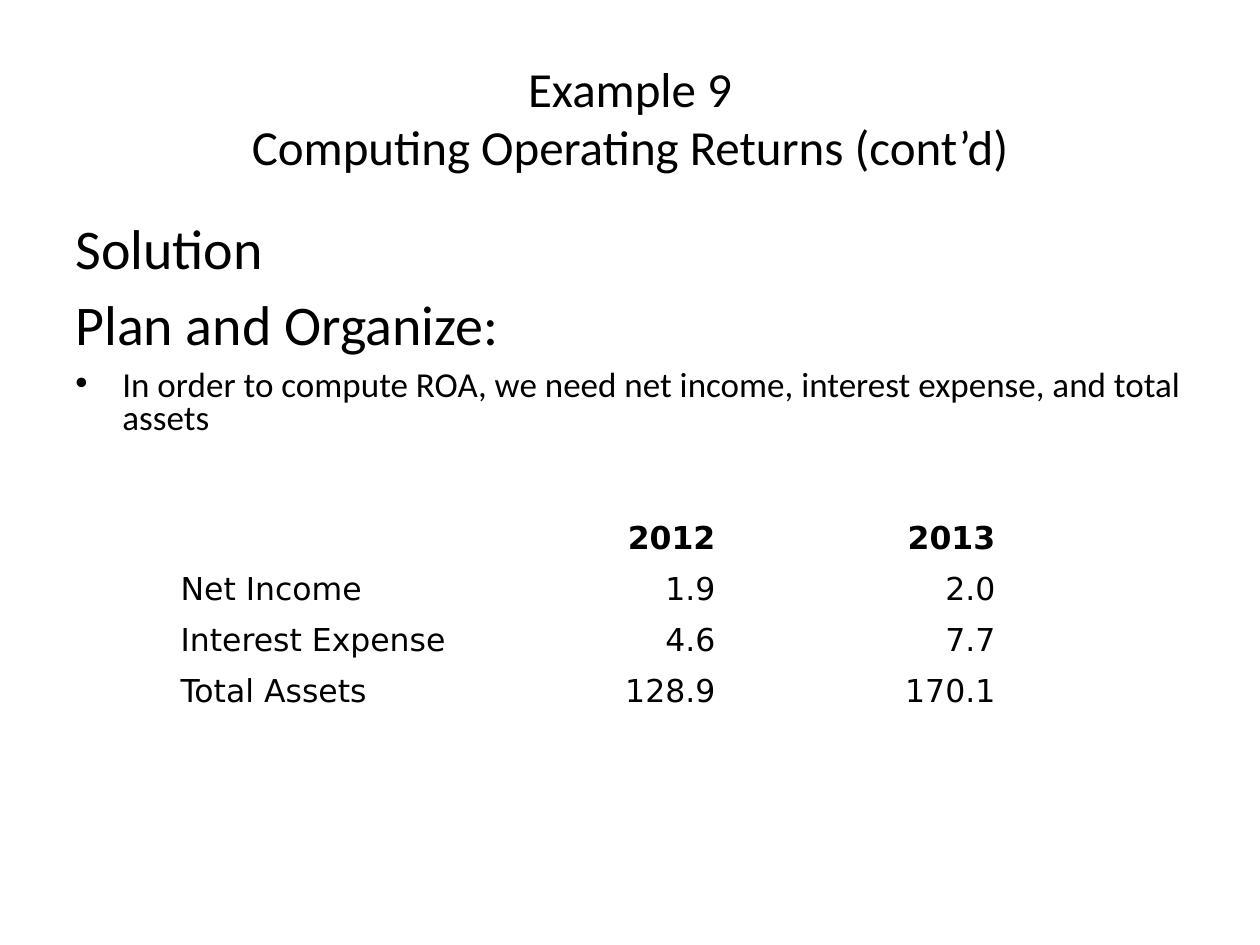
from lxml.etree import SubElement
from pptx import Presentation
from pptx.dml.color import RGBColor
from pptx.enum.text import MSO_ANCHOR as Anchor, PP_ALIGN as Align
from pptx.oxml.ns import qn
from pptx.util import Emu, Pt

EMU_PER_PX = 914400 / 126
BODY_FONT = "Calibri"
TABLE_FONT = "DejaVu Sans"
BLACK = "000000"
WHITE = "FFFFFF"
HANGING_INDENT = 47

TITLE_LINES = ["Example 9", "Computing Operating Returns (cont’d)"]
BODY = [
    ("Solution", 32, False),
    ("Plan and Organize:", 32, False),
    ("In order to compute ROA, we need net income, interest expense, "
     "and total assets", 20, True),
]
COLUMN_WIDTHS = [315, 245, 280]
ROW_HEIGHT = 51
TABLE_ROWS = [
    ["", "2012", "2013"],
    ["Net Income", "1.9", "2.0"],
    ["Interest Expense", "4.6", "7.7"],
    ["Total Assets", "128.9", "170.1"],
]


def px(length):
    """Convert whole pixels to EMU."""
    return Emu(round(length * EMU_PER_PX))


def color(hex_string):
    """Turn a hex string into a colour."""
    return RGBColor.from_string(hex_string)


def add_run(paragraph, text, size, font_name, bold=False):
    """Add one formatted run to a paragraph."""
    run = paragraph.add_run()
    run.text = text
    run.font.size = Pt(size)
    run.font.name = font_name
    run.font.bold = bold
    run.font.color.rgb = color(BLACK)


def format_title(slide, left, top, width, height):
    """Place the title placeholder and fill in its centred lines."""
    title = slide.shapes.title
    title.left, title.top = px(left), px(top)
    title.width, title.height = px(width), px(height)
    frame = title.text_frame
    frame.vertical_anchor = Anchor.MIDDLE
    paragraph = frame.paragraphs[0]
    paragraph.alignment = Align.CENTER
    for index, line in enumerate(TITLE_LINES):
        if index:
            paragraph.add_line_break()
        add_run(paragraph, line, 28, BODY_FONT)


def set_hanging_indent(paragraph, bulleted):
    """Give a paragraph its hanging indent and, if wanted, a bullet."""
    properties = paragraph._p.get_or_add_pPr()
    properties.set("marL", str(px(HANGING_INDENT)))
    properties.set("indent", str(-px(HANGING_INDENT)))
    if bulleted:
        SubElement(properties, qn("a:buFont")).set("typeface", "Arial")
        SubElement(properties, qn("a:buChar")).set("char", "•")
    else:
        SubElement(properties, qn("a:buNone"))


def add_body(slide, left, top, width, height):
    """Add the solution text."""
    box = slide.shapes.add_textbox(px(left), px(top), px(width), px(height))
    frame = box.text_frame
    frame.word_wrap = True
    for index, (text, size, bulleted) in enumerate(BODY):
        paragraph = frame.add_paragraph() if index else frame.paragraphs[0]
        paragraph.line_spacing = 0.8
        paragraph.space_before = Pt(size * 0.4)
        set_hanging_indent(paragraph, bulleted)
        add_run(paragraph, text, size, BODY_FONT)


def fill_cell(cell, text, alignment, bold):
    """Fill a table cell with white and write its text."""
    cell.fill.solid()
    cell.fill.fore_color.rgb = color(WHITE)
    if text:
        paragraph = cell.text_frame.paragraphs[0]
        paragraph.alignment = alignment
        add_run(paragraph, text, 18, TABLE_FONT, bold)


def add_figures_table(slide, left, top):
    """Add the table of yearly figures."""
    table = slide.shapes.add_table(
        len(TABLE_ROWS), len(COLUMN_WIDTHS), px(left), px(top),
        px(sum(COLUMN_WIDTHS)), px(ROW_HEIGHT * len(TABLE_ROWS))).table
    for column, width in zip(table.columns, COLUMN_WIDTHS):
        column.width = px(width)
    for row_index, values in enumerate(TABLE_ROWS):
        table.rows[row_index].height = px(ROW_HEIGHT)
        for column_index, text in enumerate(values):
            alignment = Align.RIGHT if column_index else Align.LEFT
            fill_cell(table.cell(row_index, column_index), text, alignment,
                      bold=row_index == 0)


def main():
    """Build and save the slide."""
    presentation = Presentation()
    presentation.slide_width = px(1260)
    presentation.slide_height = px(945)
    slide = presentation.slides.add_slide(presentation.slide_layouts[5])
    format_title(slide, 63, 38, 1134, 158)
    add_body(slide, 63, 220, 1134, 624)
    add_figures_table(slide, 168, 514)
    presentation.save("out.pptx")


if __name__ == "__main__":
    main()
